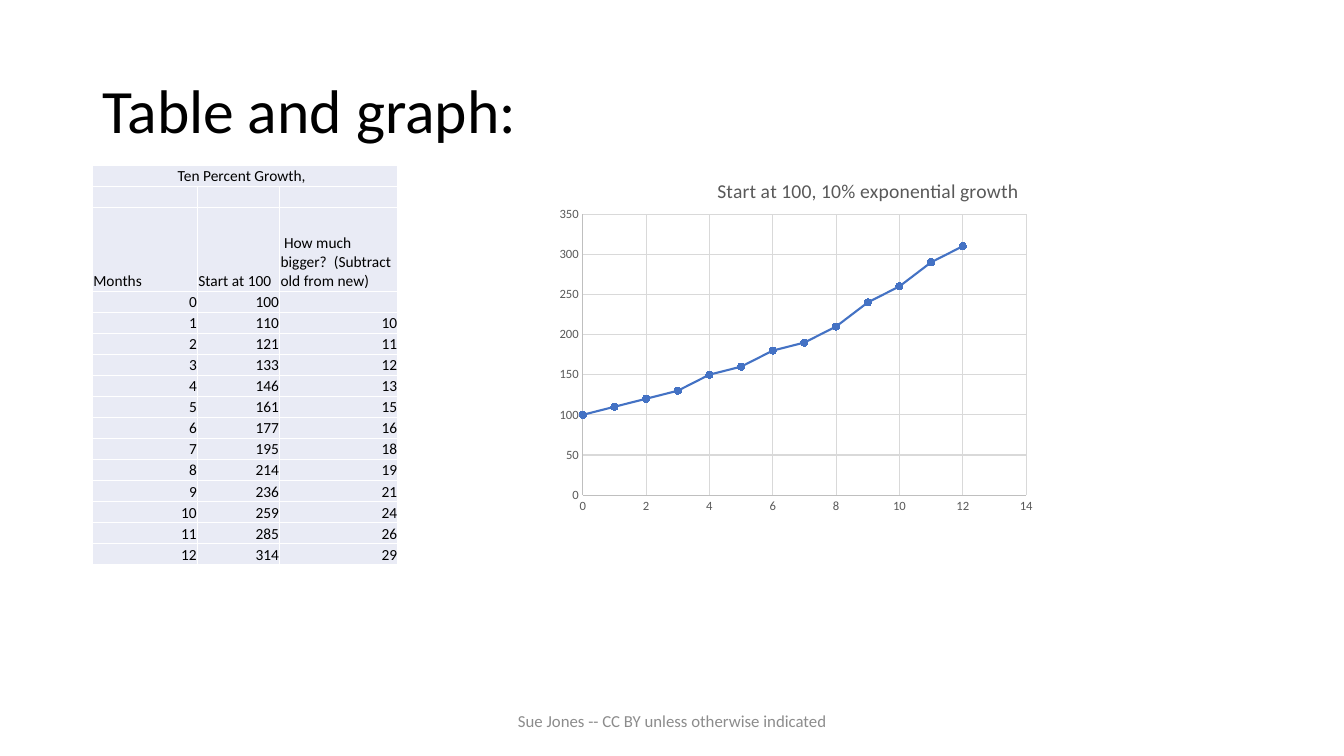
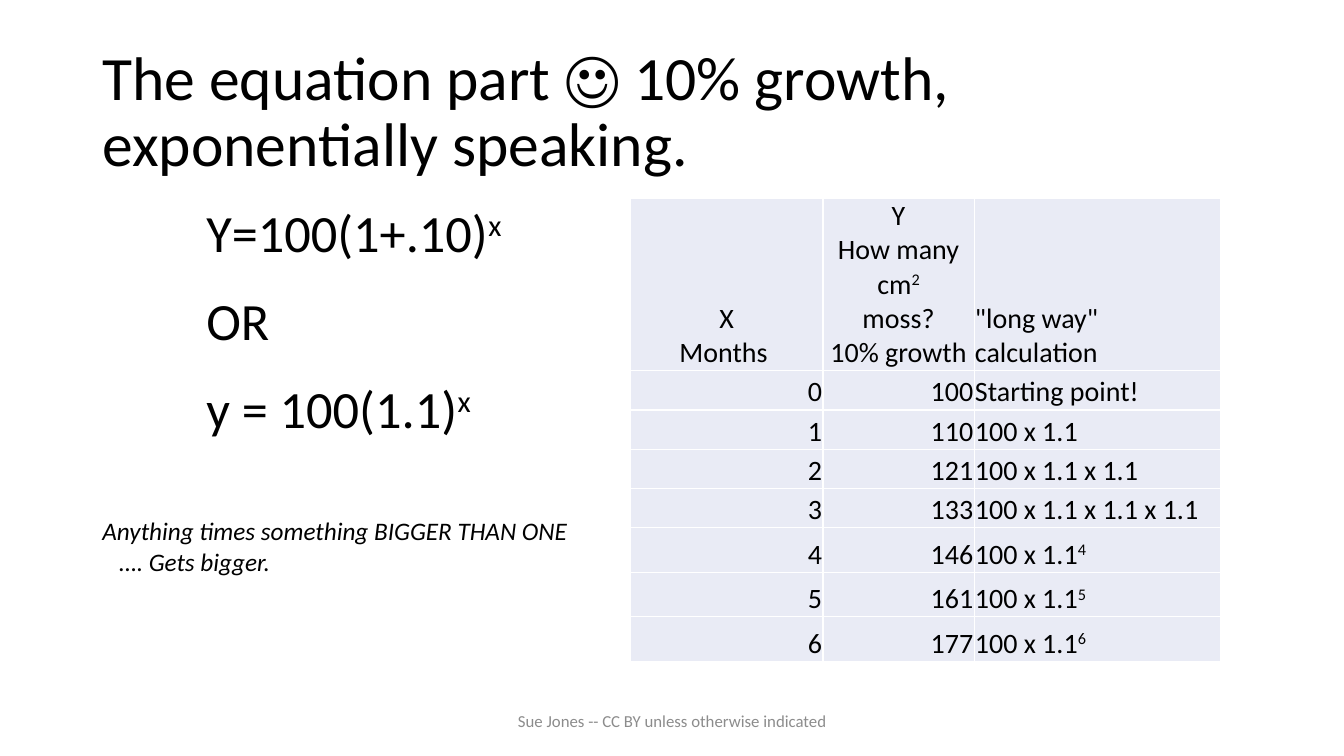
from lxml.etree import SubElement
from pptx import Presentation
from pptx.chart.data import XyChartData
from pptx.dml.color import RGBColor
from pptx.enum.chart import XL_CHART_TYPE as ChartType, XL_MARKER_STYLE as Marker, XL_TICK_MARK as Tick
from pptx.enum.text import MSO_ANCHOR as Anchor, PP_ALIGN as Align
from pptx.oxml import parse_xml
from pptx.oxml.ns import nsdecls, qn
from pptx.util import Cm, Pt

BLACK = RGBColor(0x00, 0x00, 0x00)
FOOTER_GRAY = RGBColor(0x8C, 0x8C, 0x8C)
LABEL_GRAY = RGBColor(0x59, 0x59, 0x59)
AXIS_GRAY = RGBColor(0xBF, 0xBF, 0xBF)
GRID_GRAY = RGBColor(0xD9, 0xD9, 0xD9)
CELL_FILL = RGBColor(0xE9, 0xEB, 0xF5)
CURVE_BLUE = RGBColor(0x44, 0x72, 0xC4)
FONT = "Calibri"
LEFT = 2.33

FOOTER = "Sue Jones -- CC BY unless otherwise indicated"
GROWTH_TITLE = "Table and graph:"
EQUATION_TITLE = "The equation part ☺ 10% growth, exponentially speaking."
CURVE_TITLE = "Start at 100, 10% exponential growth"

AMOUNTS = [100, 110, 121, 133, 146, 161, 177, 195, 214, 236, 259, 285, 314]
CURVE_AMOUNTS = [100, 110, 120, 130, 150, 160, 180, 190, 210, 240, 260, 290, 310]
INCREASES = ["", 10, 11, 12, 13, 15, 16, 18, 19, 21, 24, 26, 29]
GROWTH_ROWS = [
    ("Ten Percent Growth,  ", "", ""),
    ("", "", ""),
    ("Months", "Start at 100", " How much bigger?  (Subtract old from new)"),
    *zip(range(len(AMOUNTS)), AMOUNTS, INCREASES),
]
LONG_WAY = ["Starting point!", "100 x 1.1", "100 x 1.1 x 1.1", "100 x 1.1 x 1.1 x 1.1",
            "100 x 1.1^4", "100 x 1.1^5", "100 x 1.1^6"]
MOSS_ROWS = [
    ("X\nMonths ", "Y\nHow many cm^2^\vmoss?\v10% growth", '"long way" calculation'),
    *zip(range(len(LONG_WAY)), AMOUNTS, LONG_WAY),
]
EQUATIONS = "Y=100(1+.10)^x\nOR\ny = 100(1.1)^x"
REMARK = "Anything times something BIGGER THAN ONE\n…. Gets bigger."


def write(frame, text, size, color=BLACK, align=Align.LEFT):
    for index, line in enumerate(text.split("\n")):
        paragraph = frame.add_paragraph() if index else frame.paragraphs[0]
        paragraph.alignment = align
        for part, words in enumerate(line.split("^")):
            for row, piece in enumerate(words.split("\v")):
                if row:
                    paragraph.add_line_break()
                if piece:
                    run = paragraph.add_run()
                    run.text = piece
                    style(run.font, size, color)
                    if part % 2:
                        run.font._element.set("baseline", "30000")
        if not line:
            paragraph._p.get_or_add_endParaRPr().set("sz", str(size * 100))


def style(font, size, color):
    font.name, font.size, font.color.rgb = FONT, Pt(size), color
    font.bold = False


def add_text(slide, box, text, size, anchor=Anchor.MIDDLE, wrap=True, **look):
    frame = slide.shapes.add_textbox(*map(Cm, box)).text_frame
    frame.word_wrap = wrap
    frame.vertical_anchor = anchor
    write(frame, text, size, **look)
    return frame


def add_page(deck, title):
    slide = deck.slides.add_slide(deck.slide_layouts[6])
    heading = add_text(slide, (LEFT, 1.02, 29.21, 3.68), title, 44)
    heading.paragraphs[0].line_spacing = 0.9
    add_text(slide, (11.23, 17.65, 11.43, 1.02), FOOTER, 12, color=FOOTER_GRAY, align=Align.CENTER)
    return slide


def add_borders(cell):
    properties = cell._tc.get_or_add_tcPr()
    for index, side in enumerate(("lnL", "lnR", "lnT", "lnB")):
        properties.insert(index, parse_xml(
            f'<a:{side} {nsdecls("a")} w="12700"><a:solidFill><a:srgbClr val="FFFFFF"/>'
            f'</a:solidFill></a:{side}>'))


def add_grid(slide, left, top, widths, heights, rows, size, aligns):
    table = slide.shapes.add_table(len(rows), len(widths), Cm(left), Cm(top),
                                   Cm(sum(widths)), Cm(sum(heights))).table
    table.first_row = table.horz_banding = False
    for column, width in zip(table.columns, widths):
        column.width = Cm(width)
    for r, (height, values) in enumerate(zip(heights, rows)):
        table.rows[r].height = Cm(height)
        for c, value in enumerate(values):
            cell = table.cell(r, c)
            cell.fill.solid()
            cell.fill.fore_color.rgb = CELL_FILL
            cell.margin_left = cell.margin_right = cell.margin_top = Cm(0.02)
            cell.margin_bottom = Cm(0.01)
            cell.vertical_anchor = Anchor.BOTTOM
            write(cell.text_frame, str(value), size, align=aligns[r][c])
            add_borders(cell)
    return table


def set_layout(parent, **fractions):
    layout = parent.find(qn("c:layout"))
    if layout is None:
        layout = parse_xml(f'<c:layout {nsdecls("c")}/>')
        parent.insert(1 if parent.tag == qn("c:title") else 0, layout)
    manual = SubElement(layout, qn("c:manualLayout"))
    if "w" in fractions:
        SubElement(manual, qn("c:layoutTarget")).set("val", "inner")
    for mode in ("xMode", "yMode"):
        SubElement(manual, qn(f"c:{mode}")).set("val", "edge")
    for key, fraction in fractions.items():
        SubElement(manual, qn(f"c:{key}")).set("val", str(fraction))


def add_growth_curve(slide):
    data = XyChartData()
    curve = data.add_series("Series 1")
    for month, amount in enumerate(CURVE_AMOUNTS):
        curve.add_data_point(month, amount)
    chart = slide.shapes.add_chart(ChartType.XY_SCATTER_SMOOTH, Cm(13.67), Cm(4.2),
                                   Cm(12.7), Cm(9.2), data).chart
    style(chart.font, 10, BLACK)
    chart.has_legend = False
    write(chart.chart_title.text_frame, CURVE_TITLE, 14, LABEL_GRAY, Align.CENTER)
    chart.chart_title.include_in_layout = False
    set_layout(chart.chart_title._element, x=0.34, y=0.02)
    set_layout(chart._chartSpace.chart.plotArea, x=0.08, y=0.13, w=0.88, h=0.77)

    for axis, top, step in ((chart.category_axis, 14, 2), (chart.value_axis, 350, 50)):
        axis.minimum_scale, axis.maximum_scale, axis.major_unit = 0, top, step
        axis.major_tick_mark = axis.minor_tick_mark = Tick.NONE
        axis.has_major_gridlines = True
        style(axis.tick_labels.font, 9, LABEL_GRAY)
        for line, color in ((axis.format.line, AXIS_GRAY), (axis.major_gridlines.format.line, GRID_GRAY)):
            line.color.rgb, line.width = color, Pt(0.75)

    chart.plots[0].vary_by_categories = False
    series = chart.plots[0].series[0]
    series.smooth = True
    series.format.line.color.rgb = CURVE_BLUE
    series.format.line.width = Pt(1.5)
    series.marker.style, series.marker.size = Marker.CIRCLE, 5
    series.marker.format.fill.solid()
    series.marker.format.fill.fore_color.rgb = CURVE_BLUE
    series.marker.format.line.color.rgb = CURVE_BLUE


def build_growth(deck):
    slide = add_page(deck, GROWTH_TITLE)
    aligns = [[Align.CENTER] * 3] * 2 + [[Align.LEFT] * 3] + [[Align.RIGHT] * 3] * len(AMOUNTS)
    heights = [0.53, 0.53, 2.12] + [0.53] * len(AMOUNTS)
    table = add_grid(slide, LEFT, 4.16, (2.65, 2.07, 2.98), heights, GROWTH_ROWS, 11, aligns)
    table.cell(0, 0).merge(table.cell(0, 2))
    add_growth_curve(slide)


def build_equation(deck):
    slide = add_page(deck, EQUATION_TITLE)
    aligns = [(Align.CENTER, Align.CENTER, Align.LEFT)]
    aligns += [(Align.RIGHT, Align.RIGHT, Align.LEFT)] * len(LONG_WAY)
    heights = [4.35] + [0.99] * 4 + [1.12] * 3
    add_grid(slide, 15.89, 4.99, (4.85, 3.81, 6.2), heights, MOSS_ROWS, 20, aligns)

    equations = add_text(slide, (4.95, 5.33, 8.53, 5.84), EQUATIONS, 37.4)
    for index, paragraph in enumerate(equations.paragraphs):
        paragraph.line_spacing = 0.7
        paragraph.space_before = Pt(31.5 if index else 0)

    remark = add_text(slide, (LEFT, 12.87, 12.34, 1.8), REMARK, 18, Anchor.TOP, wrap=False)
    for paragraph in remark.paragraphs:
        paragraph.runs[0].font.italic = True
    remark.paragraphs[1]._p.get_or_add_pPr().set("marL", str(Cm(0.43)))


def main():
    deck = Presentation()
    deck.slide_width, deck.slide_height = Cm(33.87), Cm(19.05)
    build_growth(deck)
    build_equation(deck)
    deck.save("out.pptx")


if __name__ == "__main__":
    main()
